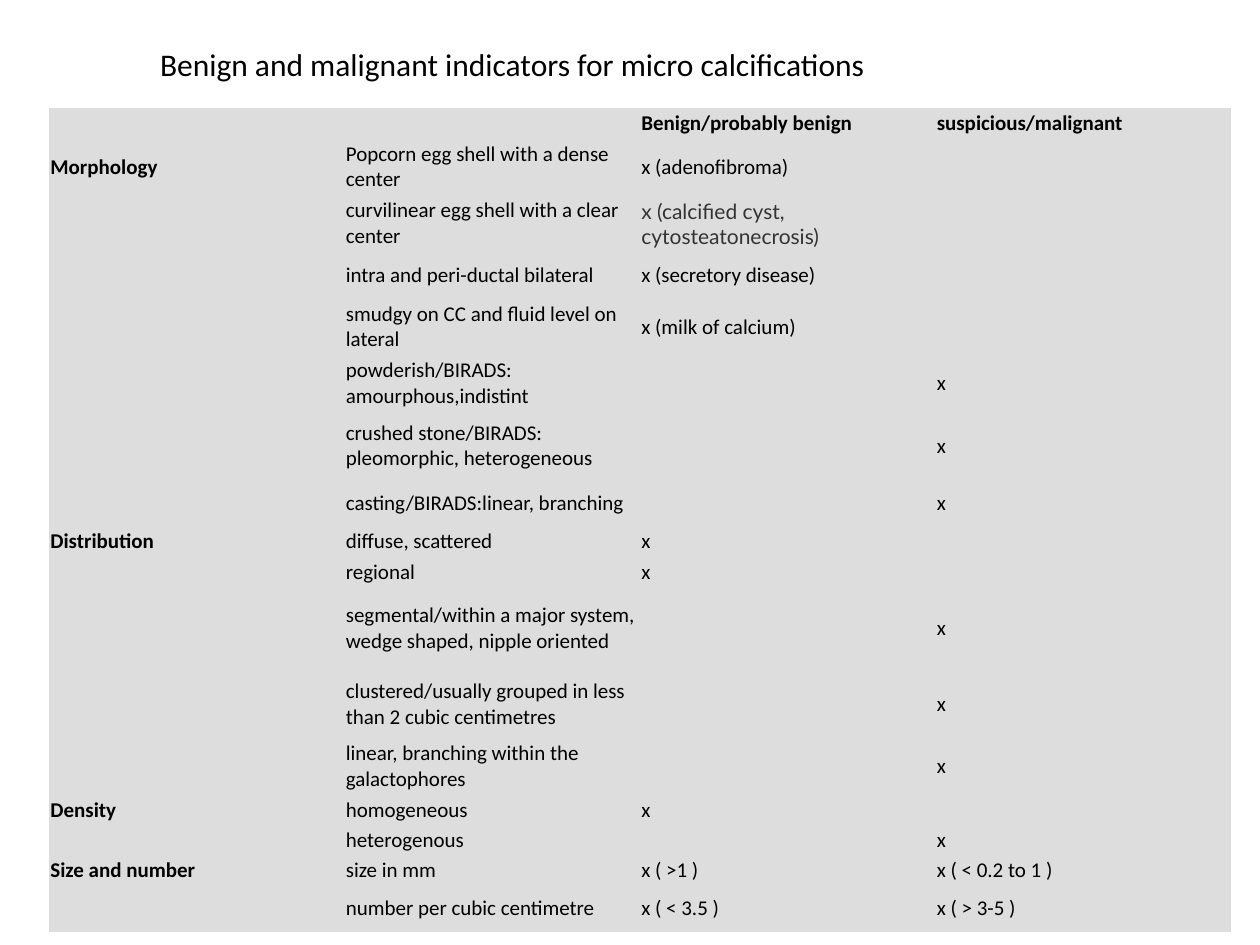
"""Build a slide tabling benign and malignant signs of micro calcifications."""
from dataclasses import dataclass

from lxml import etree
from pptx import Presentation
from pptx import util as u
from pptx.dml.color import RGBColor
from pptx.enum import text
from pptx.oxml.ns import qn


@dataclass(frozen=True)
class Theme:
    font: str = "Calibri"
    accent: str = "Lato"
    ink: str = "000000"
    soft: str = "333333"
    fill: str = "DDDDDD"
    head: int = 18
    body: int = 12


THEME = Theme()
SIZE = 10, 7.5
TITLE = "Benign and malignant indicators for micro calcifications"
TITLE_BOX = 1.17, 0.31, 6.95, 0.4
TABLE_BOX = 0.39, 0.86, 9.38, 6.48
PAD = 0.01
SOFT_CELL = 2, 2
NO_GRID = "{2D5ABB26-0587-4C30-8999-92F81FD0307C}"
LOW, MID, TALL, BIG, MAX = 0.24, 0.37, 0.45, 0.54, 0.66
ROWS = [
    (LOW, "", "", "Benign/probably benign", "suspicious/malignant"),
    (TALL, "Morphology", "Popcorn egg shell with a dense center", "x (adenofibroma)", ""),
    (TALL, "", "curvilinear egg shell with a clear center",
     "x (calcified cyst,\ncytosteatonecrosis)", ""),
    (MID, "", "intra and peri-ductal bilateral", "x (secretory disease)", ""),
    (TALL, "", "smudgy on CC and fluid level on lateral", "x (milk of calcium)", ""),
    (TALL, "", "powderish/BIRADS: amourphous,indistint", "", "x"),
    (BIG, "", "crushed stone/BIRADS: pleomorphic, heterogeneous", "", "x"),
    (MID, "", "casting/BIRADS:linear, branching", "", "x"),
    (LOW, "Distribution", "diffuse, scattered", "x", ""),
    (LOW, "", "regional", "x", ""),
    (MAX, "", "segmental/within a major system, wedge shaped, nipple oriented", "", "x"),
    (BIG, "", "clustered/usually grouped in less than 2 cubic centimetres", "", "x"),
    (TALL, "", "linear, branching within the galactophores", "", "x"),
    (LOW, "Density", "homogeneous", "x", ""),
    (LOW, "", "heterogenous", "", "x"),
    (LOW, "Size and number", "size in mm", "x ( >1 )", "x ( < 0.2 to 1 )"),
    (MID, "", "number per cubic centimetre", "x ( < 3.5 )", "x ( > 3-5 )"),
]


def style(para, size, bold=False, name=THEME.font, ink=THEME.ink):
    """Set the font of one paragraph."""
    font = para.font
    font.size, font.bold, font.name = u.Pt(size), bold, name
    font.color.rgb = RGBColor.from_string(ink)


def add_title(slide):
    """Place and format the title."""
    title = slide.shapes.title
    title.left, title.top, title.width, title.height = map(u.Inches, TITLE_BOX)
    frame = title.text_frame
    frame.text = TITLE
    frame.word_wrap = True
    frame.auto_size = text.MSO_AUTO_SIZE.SHAPE_TO_FIT_TEXT
    frame.vertical_anchor = text.MSO_ANCHOR.TOP
    frame.paragraphs[0].alignment = text.PP_ALIGN.LEFT
    style(frame.paragraphs[0], THEME.head)


def fill_cell(cell, words, bold, soft):
    """Write and format one table cell."""
    cell.text = words
    cell.vertical_anchor = text.MSO_ANCHOR.MIDDLE
    cell.margin_left = cell.margin_right = u.Inches(PAD)
    cell.margin_top = cell.margin_bottom = u.Inches(PAD)
    cell.fill.solid()
    cell.fill.fore_color.rgb = RGBColor.from_string(THEME.fill)
    look = (THEME.accent, THEME.soft) if soft else (THEME.font, THEME.ink)
    for para in cell.text_frame.paragraphs:
        style(para, THEME.body, bold, *look)
        if not words:
            end = etree.SubElement(para._p, qn("a:endParaRPr"))
            end.set("sz", str(THEME.body * 100))


def add_grid(slide):
    """Add the table of indicators."""
    cols = len(ROWS[0]) - 1
    table = slide.shapes.add_table(len(ROWS), cols, *map(u.Inches, TABLE_BOX)).table
    table.first_row = table.horz_banding = False
    table._tbl.tblPr.find(qn("a:tableStyleId")).text = NO_GRID
    for col in table.columns:
        col.width = u.Inches(TABLE_BOX[2] / cols)
    for r, (height, *words) in enumerate(ROWS):
        table.rows[r].height = u.Inches(height)
        for c, word in enumerate(words):
            fill_cell(table.cell(r, c), word, r == 0 or c == 0, (r, c) == SOFT_CELL)


def main():
    """Build and save the deck."""
    deck = Presentation()
    deck.slide_width, deck.slide_height = map(u.Inches, SIZE)
    slide = deck.slides.add_slide(deck.slide_layouts.get_by_name("Title Only"))
    add_title(slide)
    add_grid(slide)
    deck.save("out.pptx")


if __name__ == "__main__":
    main()
